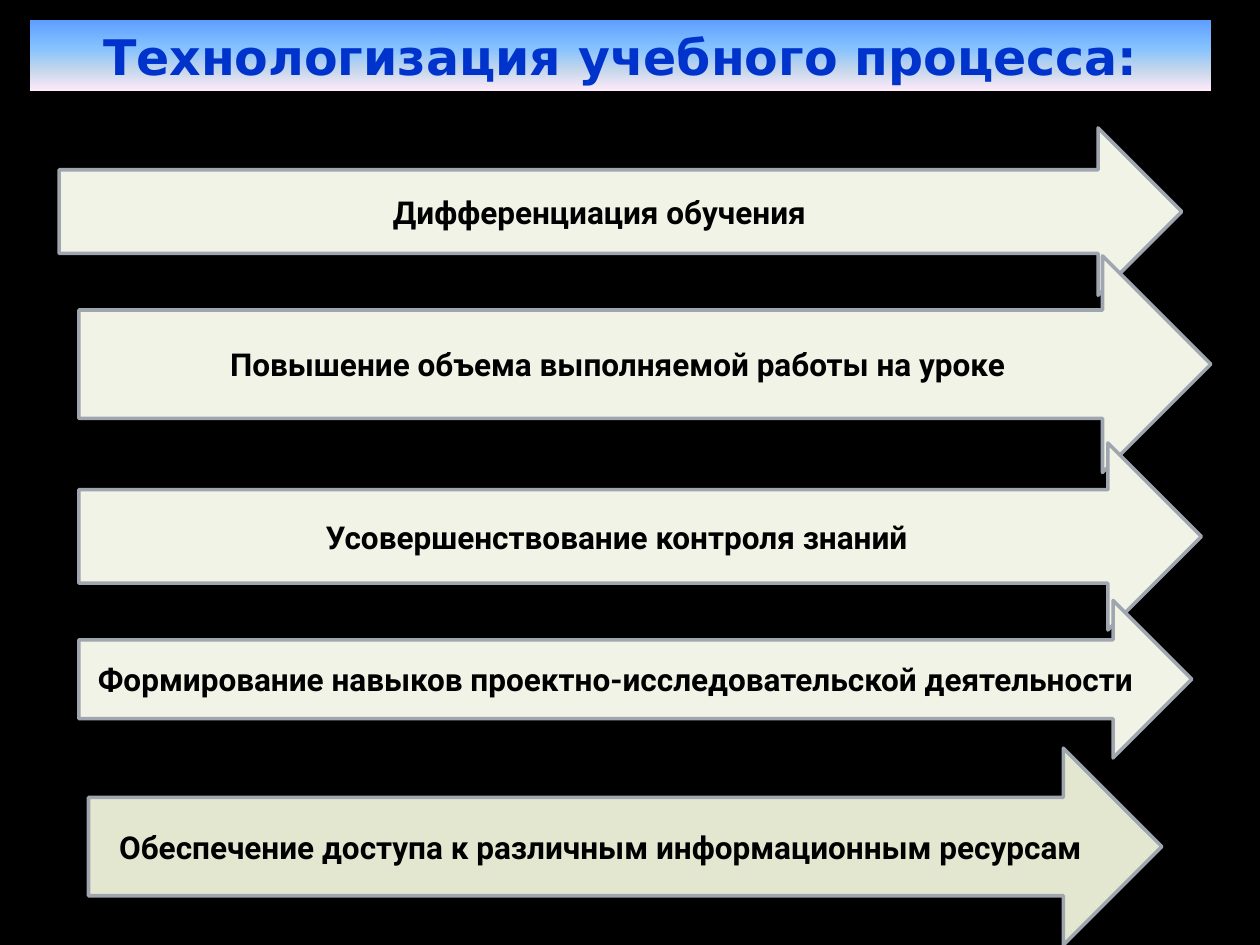
import dataclasses

import lxml.etree
import pptx
import pptx.dml.color
import pptx.enum.shapes
import pptx.enum.text
import pptx.oxml.ns
import pptx.util

Pt = pptx.util.Pt


@dataclasses.dataclass(frozen=True)
class Theme:
    background: str = "000000"
    title_color: str = "0033CC"
    title_font: str = "DejaVu Sans"
    title_size: int = 28
    title_stops: tuple = ((0, "5E9EFF"), (40, "85C2FF"), (70, "C4D6EB"), (100, "FFEBFA"))
    arrow_fill: str = "F1F3E7"
    last_arrow_fill: str = "E4E7CF"
    arrow_line: str = "A0A6AF"
    line_width: int = 2
    arrow_color: str = "000000"
    arrow_font: str = "Roboto"
    arrow_size: int = 18


def rgb(value):
    return pptx.dml.color.RGBColor.from_string(value)


class SlideBuilder:
    def __init__(self, slide, theme):
        self.slide = slide
        self.theme = theme
        background = slide.background.fill
        background.solid()
        background.fore_color.rgb = rgb(theme.background)

    def set_text(self, shape, text, font_name, size, color):
        frame = shape.text_frame
        frame.text = text
        frame.word_wrap = True
        frame.auto_size = pptx.enum.text.MSO_AUTO_SIZE.NONE
        frame.vertical_anchor = pptx.enum.text.MSO_ANCHOR.MIDDLE
        para = frame.paragraphs[0]
        para.alignment = pptx.enum.text.PP_ALIGN.CENTER
        para.font.name = font_name
        para.font.size = Pt(size)
        para.font.bold = True
        para.font.color.rgb = rgb(color)

    def fill_downward(self, shape, stops):
        """Fill with a top-to-bottom gradient of (percent, colour) stops."""
        shape.fill.gradient()
        shape.fill.gradient_angle = 270
        qn = pptx.oxml.ns.qn
        stop_list = shape.element.spPr.find(qn("a:gradFill")).find(qn("a:gsLst"))
        for old_stop in list(stop_list):
            stop_list.remove(old_stop)
        for percent, color in stops:
            stop = lxml.etree.SubElement(stop_list, qn("a:gs"), pos=str(percent * 1000))
            lxml.etree.SubElement(stop, qn("a:srgbClr"), val=color)

    def title(self, text, left, top, width, height):
        theme = self.theme
        title = self.slide.shapes.title
        title.left, title.top = Pt(left), Pt(top)
        title.width, title.height = Pt(width), Pt(height)
        self.fill_downward(title, theme.title_stops)
        self.set_text(title, text, theme.title_font, theme.title_size, theme.title_color)

    def arrow(self, text, left, top, width, height, fill):
        theme = self.theme
        arrow = self.slide.shapes.add_shape(
            pptx.enum.shapes.MSO_SHAPE.RIGHT_ARROW, Pt(left), Pt(top), Pt(width), Pt(height))
        arrow.shadow.inherit = False
        arrow.fill.solid()
        arrow.fill.fore_color.rgb = rgb(fill)
        arrow.line.color.rgb = rgb(theme.arrow_line)
        arrow.line.width = Pt(theme.line_width)
        self.set_text(arrow, text, theme.arrow_font, theme.arrow_size, theme.arrow_color)


def main():
    theme = Theme()
    deck = pptx.Presentation()
    deck.slide_width, deck.slide_height = Pt(720), Pt(540)
    title_only = deck.slide_layouts[5]
    builder = SlideBuilder(deck.slides.add_slide(title_only), theme)

    builder.title("Технологизация учебного процесса:", 16.9, 11.3, 675, 40.7)
    arrows = [
        ("Дифференциация обучения", 33.75, 73.1, 641.5, 95.6, theme.arrow_fill),
        ("Повышение объема выполняемой работы на уроке", 45, 146.2, 646.9, 123.8,
         theme.arrow_fill),
        ("Усовершенствование контроля знаний", 45, 253.1, 641.5, 106.9, theme.arrow_fill),
        ("Формирование навыков проектно-исследовательской деятельности",
         45, 343.1, 636, 90, theme.arrow_fill),
        ("Обеспечение доступа к различным информационным ресурсам",
         50.6, 427.5, 613.3, 112.5, theme.last_arrow_fill),
    ]
    for arrow in arrows:
        builder.arrow(*arrow)
    deck.save("out.pptx")


if __name__ == "__main__":
    main()
